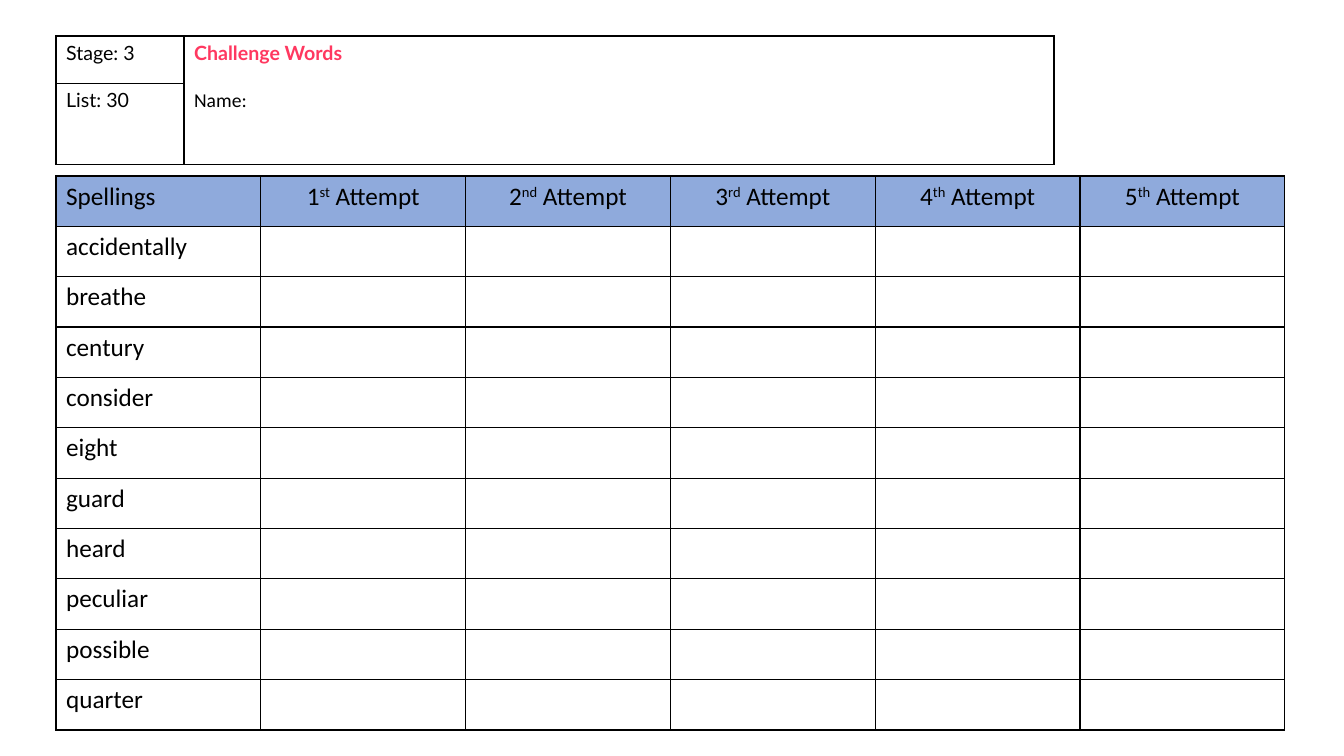
"""Build a spelling practice sheet with a heading table and an attempts grid."""
from lxml import etree
from pptx import Presentation, util as u
from pptx.dml.color import RGBColor
from pptx.enum import text
from pptx.oxml import ns

PX = 914400 / 100.8
BLACK = RGBColor(0x00, 0x00, 0x00)
PINK = RGBColor(0xFF, 0x38, 0x60)
BLUE = RGBColor(0x8F, 0xAA, 0xDC)

WORDS = ["accidentally", "breathe", "century", "consider", "eight",
         "guard", "heard", "peculiar", "possible", "quarter"]
ORDINALS = ["st", "nd", "rd", "th", "th"]
GRID_FORMAT = {"name": "Calibri", "size": u.Pt(18)}
LABEL_FORMAT = {"name": "Lato", "size": u.Pt(14)}
TITLE_FORMAT = {"name": "Lato", "size": u.Pt(14), "bold": True}
NAME_FORMAT = {"name": "Calibri", "size": u.Pt(14)}


def add_bordered_table(rows, columns, *box):
    """Add a plain table, placed in px, with thin black cell borders."""
    frame = slide.shapes.add_table(rows, columns, *(u.Emu(round(n * PX)) for n in box))
    table = frame.table
    table.first_row = table.horz_banding = False
    for cell in table.iter_cells():
        properties = cell._tc.get_or_add_tcPr()
        for side in ("lnL", "lnR", "lnT", "lnB"):
            line = etree.SubElement(properties, ns.qn(f"a:{side}"), w=str(u.Pt(1)))
            fill = etree.SubElement(line, ns.qn("a:solidFill"))
            etree.SubElement(fill, ns.qn("a:srgbClr"), val=str(BLACK))
        cell.fill.background()
    return table


def add_run(paragraph, words, formats, color=BLACK):
    """Add a formatted run of text to a paragraph."""
    run = paragraph.add_run()
    run.text = words
    for key, value in formats.items():
        setattr(run.font, key, value)
    run.font.color.rgb = color
    return run


presentation = Presentation()
presentation.slide_width = u.Emu(round(1344 * PX))
presentation.slide_height = u.Emu(round(756 * PX))
slide = presentation.slides.add_slide(presentation.slide_layouts[6])

grid = add_bordered_table(len(WORDS) + 1, len(ORDINALS) + 1, 56, 176, 1229, 554)
for row, word in enumerate(["Spellings"] + WORDS):
    add_run(grid.cell(row, 0).text_frame.paragraphs[0], word, GRID_FORMAT)
for number, ordinal in enumerate(ORDINALS, start=1):
    paragraph = grid.cell(0, number).text_frame.paragraphs[0]
    paragraph.alignment = text.PP_ALIGN.CENTER
    add_run(paragraph, str(number), GRID_FORMAT)
    suffix = add_run(paragraph, ordinal, GRID_FORMAT)
    suffix._r.get_or_add_rPr().set("baseline", "30000")
    add_run(paragraph, " Attempt", GRID_FORMAT)
for cell in grid.rows[0].cells:
    cell.fill.solid()
    cell.fill.fore_color.rgb = BLUE

heading = add_bordered_table(2, 2, 56, 36, 998, 95)
for column, width in zip(heading.columns, (128, 870)):
    column.width = u.Emu(round(width * PX))
for row, label in enumerate(["Stage: 3", "List: 30"]):
    add_run(heading.cell(row, 0).text_frame.paragraphs[0], label, LABEL_FORMAT)

title_cell = heading.cell(0, 1)
title_cell.merge(heading.cell(1, 1))
add_run(title_cell.text_frame.paragraphs[0], "Challenge Words", TITLE_FORMAT, PINK)
name_line = title_cell.text_frame.add_paragraph()
name_line.space_before = u.Pt(17)
add_run(name_line, "Name:", NAME_FORMAT)

presentation.save("out.pptx")
